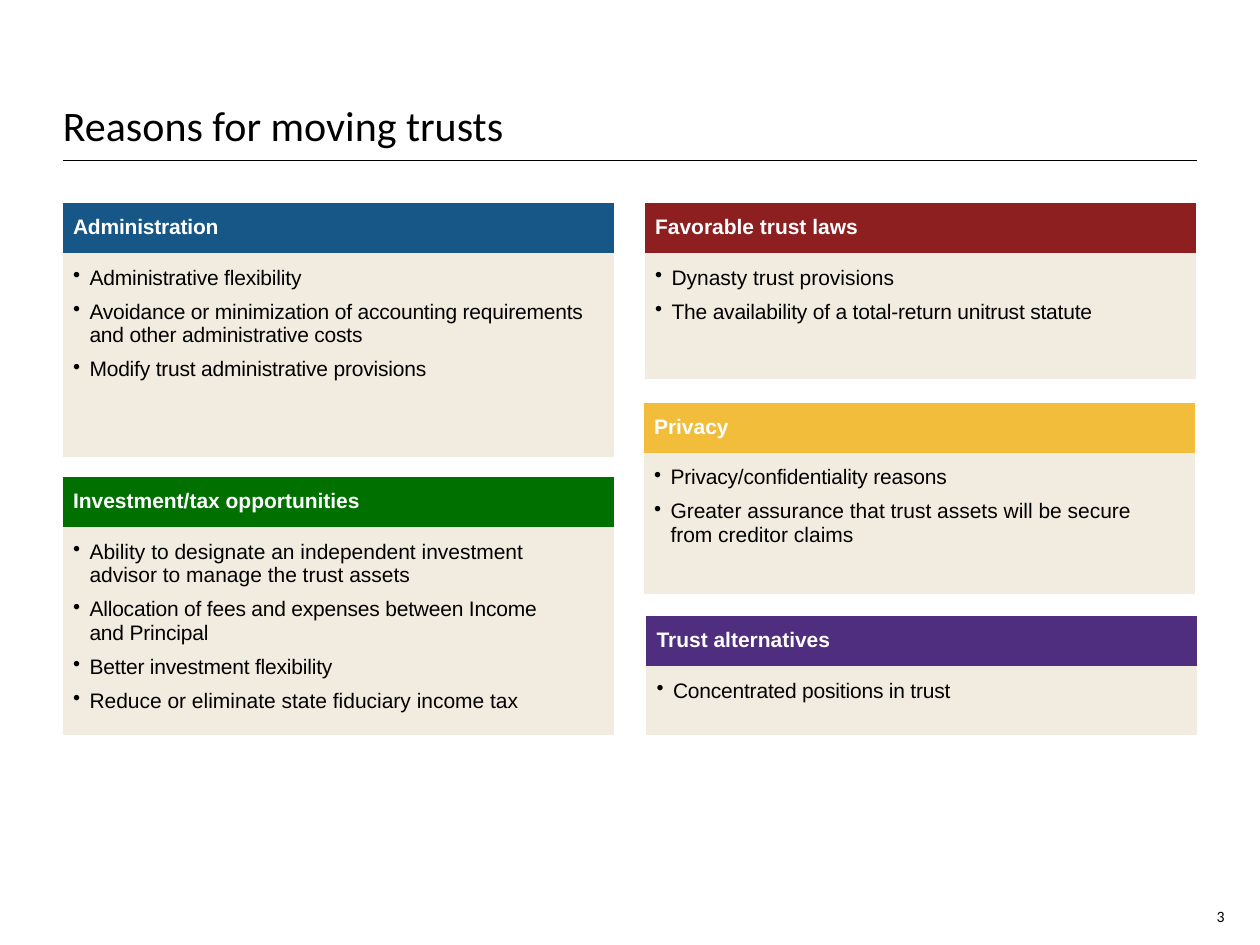
from lxml import etree
from pptx import Presentation
from pptx.dml.color import RGBColor
from pptx.enum.shapes import MSO_CONNECTOR
from pptx.enum.text import MSO_ANCHOR, PP_ALIGN
from pptx.oxml.ns import qn
from pptx.util import Pt

STRAIGHT = MSO_CONNECTOR.STRAIGHT
BOTTOM = MSO_ANCHOR.BOTTOM
LEFT, RIGHT = PP_ALIGN.LEFT, PP_ALIGN.RIGHT

BLACK = RGBColor(0x00, 0x00, 0x00)
WHITE = RGBColor(0xFF, 0xFF, 0xFF)
CREAM = RGBColor(0xF1, 0xEC, 0xDF)
BLUE = RGBColor(0x16, 0x57, 0x88)
RED = RGBColor(0x8D, 0x1F, 0x21)
GREEN = RGBColor(0x00, 0x70, 0x00)
GOLD = RGBColor(0xF1, 0xBD, 0x3B)
PURPLE = RGBColor(0x4F, 0x2D, 0x7F)

PLAIN_TABLE_STYLE = "{2D5ABB26-0587-4C30-8999-92F81FD0307C}"
PANEL_WIDTH = 314.6
HEADER_HEIGHT = 28
NORMAL, TIGHT = 0, -0.1

PANELS = [
    (36, 116, 116.6, BLUE, ("Administration", TIGHT), [
        ("Administrative flexibility", TIGHT),
        ("Avoidance or minimization of accounting requirements "
         "and other administrative costs", TIGHT),
        ("Modify trust administrative provisions", TIGHT),
    ]),
    (368.6, 116, 72, RED, ("Favorable trust laws", NORMAL), [
        ("Dynasty trust provisions", NORMAL),
        ("The availability of a total-return unitrust statute", TIGHT),
    ]),
    (36, 272.5, 116.6, GREEN, ("Investment/tax opportunities", NORMAL), [
        ("Ability to designate an independent investment\n"
         "advisor to manage the trust assets", NORMAL),
        ("Allocation of fees and expenses between Income\n"
         "and Principal", TIGHT),
        ("Better investment flexibility", TIGHT),
        ("Reduce or eliminate state fiduciary income tax", NORMAL),
    ]),
    (368, 230, 80.5, GOLD, ("Privacy", NORMAL), [
        ("Privacy/confidentiality reasons", TIGHT),
        ("Greater assurance that trust assets will be secure\n"
         "from creditor claims", NORMAL),
    ]),
    (369.4, 352, 39, PURPLE, ("Trust alternatives", NORMAL), [
        ("Concentrated positions in trust", TIGHT),
    ]),
]


def set_font(para, name, size, color, bold=False):
    font = para.font
    font.name, font.size, font.bold = name, Pt(size), bold
    font.color.rgb = color


def write_spaced(para, text, spacing):
    para.text = text
    for span in para.runs:
        span._r.get_or_add_rPr().set("spc", str(round(spacing * 100)))


def add_bullet(para, indent=9.4):
    properties = para._p.get_or_add_pPr()
    properties.set("marL", str(Pt(indent)))
    properties.set("indent", str(-Pt(indent)))
    etree.SubElement(properties, qn("a:buChar")).set("char", "•")


def add_text(page, text, left, top, width, height, size, align=LEFT,
             inset_bottom=0):
    box = page.shapes.add_textbox(Pt(left), Pt(top), Pt(width), Pt(height))
    frame = box.text_frame
    frame.word_wrap = True
    frame.vertical_anchor = BOTTOM
    frame.margin_left = frame.margin_right = frame.margin_top = 0
    frame.margin_bottom = Pt(inset_bottom)
    para = frame.paragraphs[0]
    para.text = text
    para.alignment = align
    set_font(para, "Calibri", size, BLACK)


def add_rule(page, left, right, y):
    rule = page.shapes.add_connector(STRAIGHT, Pt(left), Pt(y), Pt(right), Pt(y))
    rule.line.color.rgb = BLACK
    rule.line.width = Pt(0.5)
    etree.SubElement(rule._element.spPr, qn("a:effectLst"))


def style_cell(cell, color):
    cell.fill.solid()
    cell.fill.fore_color.rgb = color
    cell.margin_left = cell.margin_right = Pt(5.76)
    cell.margin_top = cell.margin_bottom = Pt(7.2)


def add_panel(page, left, top, body_height, color, heading, items):
    frame = page.shapes.add_table(2, 1, Pt(left), Pt(top), Pt(PANEL_WIDTH),
                                  Pt(HEADER_HEIGHT + body_height))
    table = frame.table
    table.first_row = table.horz_banding = False
    table._tbl.tblPr.find(qn("a:tableStyleId")).text = PLAIN_TABLE_STYLE
    table.rows[0].height = Pt(HEADER_HEIGHT)
    table.rows[1].height = Pt(body_height)

    header, body = table.cell(0, 0), table.cell(1, 0)
    style_cell(header, color)
    style_cell(body, CREAM)

    para = header.text_frame.paragraphs[0]
    write_spaced(para, *heading)
    set_font(para, "Arial", 12, WHITE, bold=True)

    for index, item in enumerate(items):
        frame = body.text_frame
        para = frame.add_paragraph() if index else frame.paragraphs[0]
        write_spaced(para, *item)
        add_bullet(para)
        para.space_after = Pt(6)
        set_font(para, "Arial", 12, BLACK)


def main():
    deck = Presentation()
    deck.slide_width, deck.slide_height = Pt(720), Pt(540)
    page = deck.slides.add_slide(deck.slide_layouts[6])
    add_rule(page, 36, 684, 91.6)
    add_text(page, "Reasons for moving trusts", 36, 24.5, 648, 67, 24,
             inset_bottom=5.76)
    add_text(page, "3", 671.8, 511.2, 28, 18, 9, align=RIGHT)
    for panel in PANELS:
        add_panel(page, *panel)
    deck.save("out.pptx")


if __name__ == "__main__":
    main()
